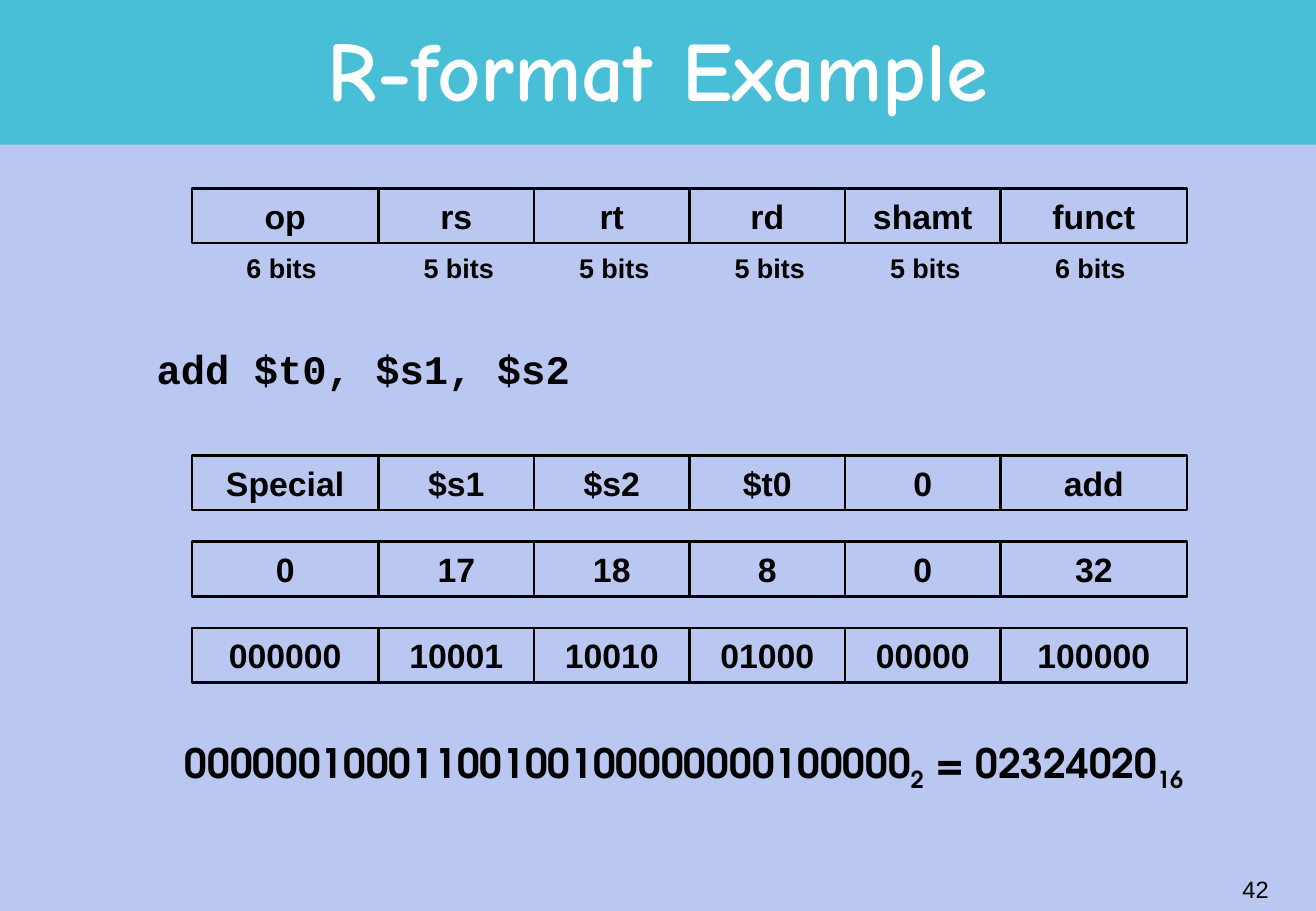
"""Builds the R-format instruction example slide."""
from pptx import Presentation, util as u
from pptx.dml.color import RGBColor
from pptx.enum import shapes, text

ALIGN = text.PP_ALIGN
ANCHOR = text.MSO_ANCHOR
FIELD_BITS = [6, 5, 5, 5, 5, 6]
FIELDS_LEFT, FIELDS_WIDTH, FIELD_HEIGHT = 1.58, 8.19, 0.45
LABEL_SHIFT = {6: -0.03, 5: 0.02}
FIELD_ROWS = [
    (1.55, ["op", "rs", "rt", "rd", "shamt", "funct"]),
    (3.75, ["Special", "$s1", "$s2", "$t0", "0", "add"]),
    (4.46, ["0", "17", "18", "8", "0", "32"]),
    (5.17, ["000000", "10001", "10010", "01000", "00000", "100000"]),
]


def color(value):
    """Turns a hex string into a colour."""
    return RGBColor.from_string(value)


def add_text(para, content, size=20, font="Arial", bold=True, ink="000000", subscript=False):
    """Adds one formatted run to a paragraph."""
    span = para.add_run()
    span.text = content
    span.font.size = u.Pt(size)
    span.font.name = font
    span.font.bold = bold
    span.font.color.rgb = color(ink)
    if subscript:
        span.font._element.set("baseline", "-25000")


class Slide:
    """Holds the style and the current page."""

    def __init__(self, deck):
        """Adds a blank page with its background."""
        self.line, self.line_width = "000000", 1.5
        self.page = deck.slides.add_slide(deck.slide_layouts[6])
        self.page.background.fill.solid()
        self.page.background.fill.fore_color.rgb = color("BAC8F1")

    def rectangle(self, left, top, width, height, fill=None):
        """Draws a filled band or an outlined box."""
        box = self.page.shapes.add_shape(
            shapes.MSO_SHAPE.RECTANGLE, *map(u.Inches, (left, top, width, height)))
        box.shadow.inherit = False
        if fill:
            box.fill.solid()
            box.fill.fore_color.rgb = color(fill)
            box.line.fill.background()
        else:
            box.fill.background()
            box.line.color.rgb = color(self.line)
            box.line.width = u.Pt(self.line_width)
        return box

    def field(self, left, top, width, content):
        """Draws one instruction field."""
        box = self.rectangle(left, top, width, FIELD_HEIGHT)
        box.text_frame.vertical_anchor = ANCHOR.MIDDLE
        para = box.text_frame.paragraphs[0]
        para.alignment = ALIGN.CENTER
        add_text(para, content)

    def text(self, left, top, width, height, *parts, align=ALIGN.CENTER,
             anchor=ANCHOR.TOP, spacing=1.0, wrap=True, **style):
        """Adds a text box; every second part is a subscript."""
        box = self.page.shapes.add_textbox(*map(u.Inches, (left, top, width, height)))
        box.text_frame.word_wrap = wrap
        box.text_frame.vertical_anchor = anchor
        para = box.text_frame.paragraphs[0]
        para.alignment = align
        para.line_spacing = spacing
        for index, part in enumerate(parts):
            add_text(para, part, subscript=index % 2 == 1, **style)


def main():
    """Builds and saves the deck."""
    deck = Presentation()
    deck.slide_width, deck.slide_height = u.Inches(10.83), u.Inches(7.5)
    slide = Slide(deck)

    slide.rectangle(0, 0, 10.83, 1.19, fill="49BFD7")
    slide.text(0.81, 0.13, 9.21, 0.99, "R-format Example", anchor=ANCHOR.MIDDLE,
               spacing=0.85, size=50, font="Comic Neue", ink="FFFFFF")

    bit_width = FIELDS_WIDTH / sum(FIELD_BITS)
    for column, bits in enumerate(FIELD_BITS):
        left = FIELDS_LEFT + sum(FIELD_BITS[:column]) * bit_width
        width = bits * bit_width
        for top, names in FIELD_ROWS:
            slide.field(left, top, width, names[column])
        slide.text(left + LABEL_SHIFT[bits], 2.02, width, 0.37, f"{bits} bits", size=16)

    slide.text(1.19, 2.83, 8.83, 0.7, "add $t0, $s1, $s2", align=ALIGN.LEFT,
               spacing=0.9, size=24, font="Courier New")
    slide.text(0.81, 6.03, 9.64, 0.55, "00000010001100100100000000100000", "2",
               " = 02324020", "16", spacing=0.9, size=24, font="TeX Gyre Adventor")
    slide.text(8.28, 7.14, 2.26, 0.36, "42", align=ALIGN.RIGHT,
               anchor=ANCHOR.MIDDLE, size=14, bold=False)

    deck.save("out.pptx")


if __name__ == "__main__":
    main()
